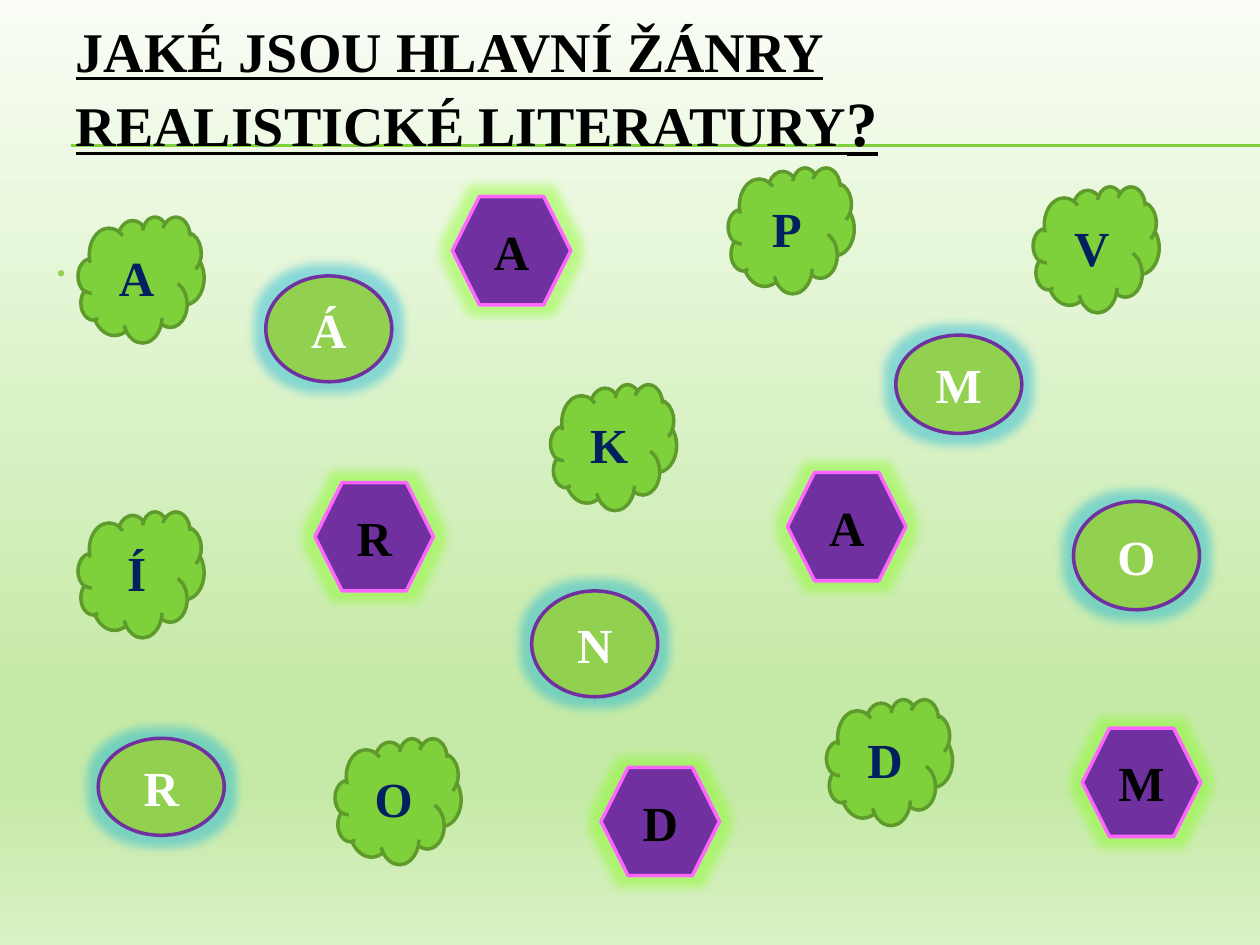
from pptx import Presentation
from pptx.dml.color import RGBColor
from pptx.enum.shapes import MSO_CONNECTOR, MSO_SHAPE
from pptx.enum.text import MSO_ANCHOR, MSO_AUTO_SIZE, PP_ALIGN
from pptx.oxml import parse_xml
from pptx.oxml.ns import nsdecls
from pptx.util import Inches, Pt
from lxml import etree

BLACK = RGBColor(0x00, 0x00, 0x00)
WHITE = RGBColor(0xFF, 0xFF, 0xFF)
NAVY = RGBColor(0x00, 0x20, 0x60)
PURPLE = RGBColor(0x70, 0x30, 0xA0)
PINK = RGBColor(0xFF, 0x66, 0xFF)
LIME = RGBColor(0x92, 0xD0, 0x50)
GREEN = RGBColor(0x7F, 0xD1, 0x3B)
DARK_GREEN = RGBColor(0x5E, 0x9B, 0x2C)
CYAN_GLOW = RGBColor(0x00, 0xAD, 0xDC)
GREEN_GLOW = RGBColor(0x7C, 0xFF, 0x0E)
BACKGROUND_STOPS = [
    (0, RGBColor(0xF9, 0xFD, 0xF5)),
    (74, RGBColor(0xC5, 0xEA, 0xA7)),
    (83, RGBColor(0xC5, 0xEA, 0xA7)),
    (100, RGBColor(0xD9, 0xF1, 0xC4)),
]
SERIF = "Times New Roman"


def style_run(run, size, color, font=SERIF, bold=True):
    run.font.name = font
    run.font.size = Pt(size)
    run.font.bold = bold
    run.font.color.rgb = color


def set_effects(shape, glow=None):
    """Replace inherited effects with a glow, or with nothing."""
    properties = shape._element.spPr
    for old in properties.findall("{*}effectLst"):
        properties.remove(old)
    content = ""
    if glow is not None:
        content = (f'<a:glow rad="{Pt(11)}"><a:srgbClr val="{glow}">'
                   '<a:alpha val="40000"/></a:srgbClr></a:glow>')
    properties.append(parse_xml(
        f'<a:effectLst {nsdecls("a")}>{content}</a:effectLst>'))


presentation = Presentation()
presentation.slide_width = Inches(10)
presentation.slide_height = Inches(7.5)
slide = presentation.slides.add_slide(presentation.slide_layouts[1])

# Background gradient, top to bottom
background = slide.background.fill
background.gradient()
background.gradient_angle = 270
stop_list = background._fill._gradFill.find("{*}gsLst")
for stop in list(stop_list):
    stop_list.remove(stop)
for position, color in BACKGROUND_STOPS:
    stop_list.append(parse_xml(
        f'<a:gs {nsdecls("a")} pos="{position * 1000}">'
        f'<a:srgbClr val="{color}"/></a:gs>'))

# Double rule under the title
for y in (1.15, 1.16):
    rule = slide.shapes.add_connector(
        MSO_CONNECTOR.STRAIGHT, Inches(0.56), Inches(y), Inches(10), Inches(y))
    rule.line.color.rgb = GREEN
    rule.line.width = Pt(0.75)
    set_effects(rule)
    slide.shapes._spTree.insert(2, rule._element)

# Title
title = slide.shapes.title
title.left, title.top = Inches(0.5), Inches(0.08)
title.width, title.height = Inches(9), Inches(1.24)
title.text_frame.auto_size = MSO_AUTO_SIZE.NONE
title.text_frame.vertical_anchor = MSO_ANCHOR.MIDDLE
paragraph = title.text_frame.paragraphs[0]
paragraph.alignment = PP_ALIGN.LEFT
for text, size in (("JAKÉ JSOU HLAVNÍ ŽÁNRY REALISTICKÉ LITERATURY", 32), ("?", 36)):
    run = paragraph.add_run()
    run.text = text
    style_run(run, size, BLACK)
    run.font.underline = True

# Body
body = slide.placeholders[1]
body.left, body.top = Inches(0.33), Inches(1.7)
body.width, body.height = Inches(9.5), Inches(4.95)
body.text_frame.text = "."
body.text_frame.auto_size = MSO_AUTO_SIZE.NONE
paragraph = body.text_frame.paragraphs[0]
style_run(paragraph.runs[0], 32, LIME, font="Roboto", bold=False)
paragraph_properties = paragraph._p.get_or_add_pPr()
paragraph_properties.set("marL", str(Inches(0.38)))
paragraph_properties.set("indent", str(Inches(-0.38)))
etree.SubElement(
    paragraph_properties,
    "{http://schemas.openxmlformats.org/drawingml/2006/main}buNone")

# Letter groups: kind, width, fill, line, text colour, glow,
# then each letter with its left, top and height
letter_groups = [
    (MSO_SHAPE.OVAL, 1, LIME, PURPLE, WHITE, CYAN_GLOW, [
        ("N", 4.22, 4.69, 0.84), ("Á", 2.11, 2.19, 0.84),
        ("M", 7.11, 2.66, 0.78), ("O", 8.52, 3.98, 0.86),
        ("R", 0.78, 5.86, 0.77)]),
    (MSO_SHAPE.CLOUD, 1, GREEN, DARK_GREEN, NAVY, None, [
        ("A", 0.62, 1.72, 1), ("K", 4.37, 3.05, 1), ("D", 6.56, 5.55, 1),
        ("Í", 0.62, 4.06, 1), ("V", 8.2, 1.48, 1), ("O", 2.66, 5.86, 1),
        ("P", 5.78, 1.33, 1)]),
    (MSO_SHAPE.HEXAGON, 0.94, PURPLE, PINK, BLACK, GREEN_GLOW, [
        ("A", 6.25, 3.75, 0.86), ("M", 8.59, 5.78, 0.86),
        ("A", 3.59, 1.56, 0.86), ("R", 2.5, 3.83, 0.86),
        ("D", 4.77, 6.09, 0.86)]),
]
for kind, width, fill, line, text_color, glow, letters in letter_groups:
    for letter, left, top, height in letters:
        shape = slide.shapes.add_shape(
            kind, Inches(left), Inches(top), Inches(width), Inches(height))
        shape.fill.solid()
        shape.fill.fore_color.rgb = fill
        shape.line.color.rgb = line
        shape.line.width = Pt(2)
        set_effects(shape, glow)
        shape.text_frame.text = letter
        shape.text_frame.vertical_anchor = MSO_ANCHOR.MIDDLE
        paragraph = shape.text_frame.paragraphs[0]
        paragraph.alignment = PP_ALIGN.CENTER
        style_run(paragraph.runs[0], 28, text_color)

presentation.save("out.pptx")
